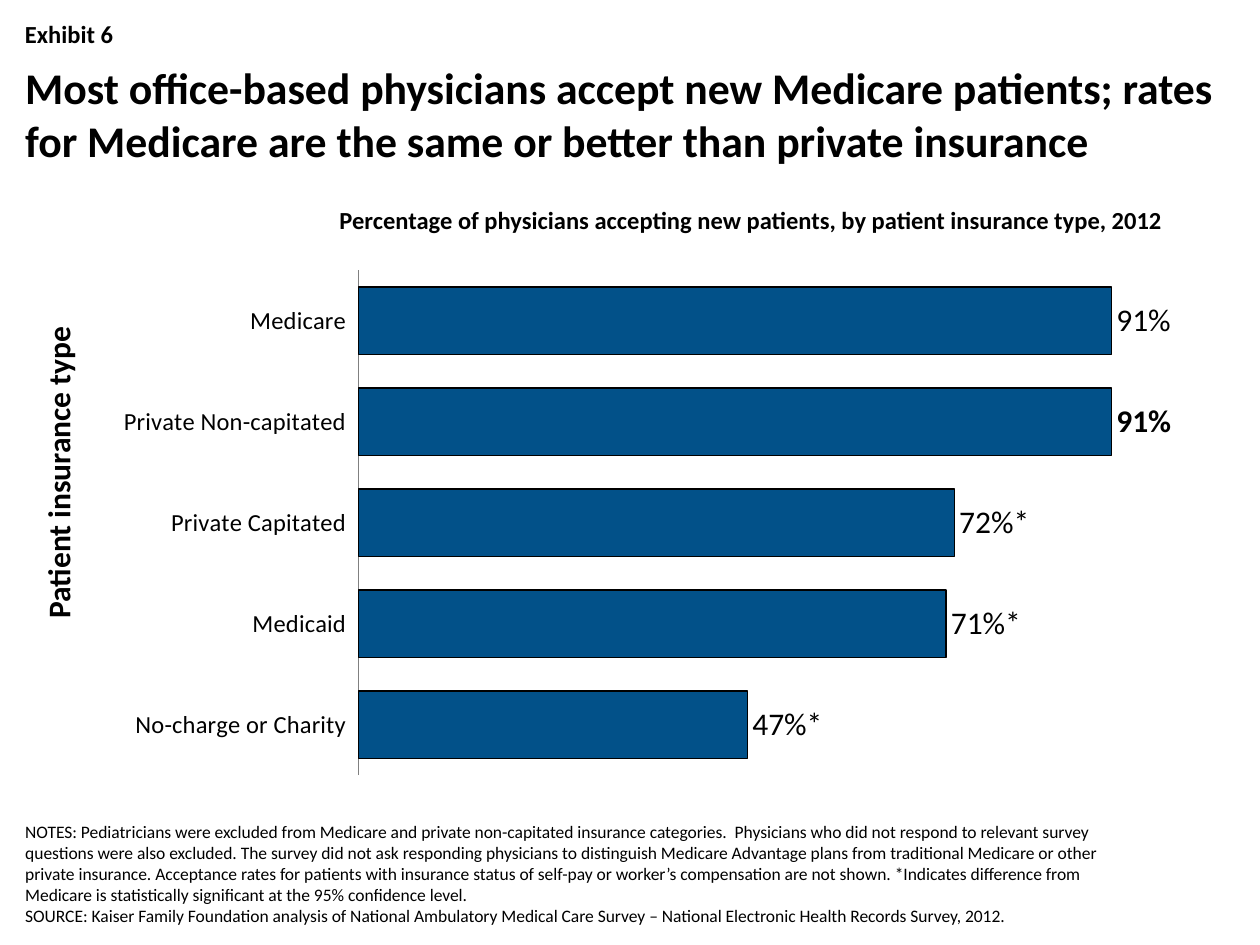
from lxml.etree import SubElement
from pptx import Presentation
from pptx.chart.data import CategoryChartData
from pptx.dml.color import RGBColor
from pptx.enum.chart import XL_CHART_TYPE, XL_LABEL_POSITION, XL_TICK_LABEL_POSITION, XL_TICK_MARK
from pptx.enum.text import MSO_ANCHOR, MSO_AUTO_SIZE, PP_ALIGN
from pptx.oxml import parse_xml
from pptx.oxml.ns import nsdecls, qn
from pptx.util import Inches, Pt

BLACK = RGBColor(0x00, 0x00, 0x00)
BLUE = RGBColor(0x02, 0x51, 0x89)
GRAY = RGBColor(0x80, 0x80, 0x80)
FACE = "Calibri"

TITLE = ("Most office-based physicians accept new Medicare patients; rates "
         "for Medicare are the same or better than private insurance")
NOTES = [
    "NOTES: Pediatricians were excluded from Medicare and private non-capitated "
    "insurance categories.  Physicians who did not respond to relevant survey "
    "questions were also excluded. The survey did not ask responding physicians to "
    "distinguish Medicare Advantage plans from traditional Medicare or other private "
    "insurance. Acceptance rates for patients with insurance status of self-pay or "
    "worker’s compensation are not shown. *Indicates difference from Medicare is "
    "statistically significant at the 95% confidence level.",
    "SOURCE: Kaiser Family Foundation analysis of National Ambulatory Medical Care "
    "Survey – National Electronic Health Records Survey, 2012.",
]
# Category, value, own label (None shows the value itself)
RATES = [
    ("Medicare", 0.91, "91%"),
    ("Private Non-capitated", 0.91, None),
    ("Private Capitated", 0.72, "72%*"),
    ("Medicaid", 0.71, "71%*"),
    ("No-charge or Charity", 0.47, "47%*"),
]


def set_font(font, size, bold=False):
    font.name, font.size, font.bold = FACE, Pt(size), bold
    font.color.rgb = BLACK


def place(shape, box):
    shape.left, shape.top, shape.width, shape.height = map(Inches, box)


def fill_text(shape, lines, size, bold=False, align=PP_ALIGN.LEFT, anchor=MSO_ANCHOR.TOP):
    frame = shape.text_frame
    frame.text = "\n".join(lines)
    frame.word_wrap = True
    frame.auto_size = MSO_AUTO_SIZE.NONE
    frame.vertical_anchor = anchor
    for para in frame.paragraphs:
        para.alignment = align
        para.space_before = Pt(0)
        for run in para.runs:
            set_font(run.font, size, bold)


def add_label(slide, text, box, size, align=PP_ALIGN.LEFT, turn=0):
    label = slide.shapes.add_textbox(*map(Inches, box))
    label.rotation = turn
    fill_text(label, [text], size, True, align)


def add_notes(body):
    place(body, (0.1, 6.8, 9.1, 0.6))
    fill_text(body, NOTES, 10, anchor=MSO_ANCHOR.BOTTOM)
    for para in body.text_frame.paragraphs:
        props = para._p.get_or_add_pPr()
        props.set("marL", "0")
        props.set("indent", "0")
        SubElement(props, qn("a:buNone"))


def set_plot(chart, x, y, wide, high):
    area = chart._chartSpace.chart.plotArea
    for old in area.findall(qn("c:layout")):
        area.remove(old)
    sizes = "".join(f'<c:{tag} val="{val}"/>' for tag, val in
                    (("x", x), ("y", y), ("w", wide), ("h", high)))
    area.insert(0, parse_xml(
        f'<c:layout {nsdecls("c")}><c:manualLayout><c:layoutTarget val="inner"/>'
        f'<c:xMode val="edge"/><c:yMode val="edge"/>{sizes}'
        '</c:manualLayout></c:layout>'))


def style_axes(chart):
    cats = chart.category_axis
    cats.reverse_order = True
    cats.major_tick_mark = cats.minor_tick_mark = XL_TICK_MARK.NONE
    cats.tick_label_position = XL_TICK_LABEL_POSITION.LOW
    set_font(cats.tick_labels.font, 14)
    cats.format.line.color.rgb = GRAY
    cats.format.line.width = Pt(0.75)

    vals = chart.value_axis
    vals.minimum_scale, vals.maximum_scale, vals.major_unit = 0, 1, 0.2
    vals.has_major_gridlines = False
    vals.visible = False


def style_bars(plot):
    plot.gap_width = 50
    plot.vary_by_categories = False
    bars = plot.series[0]
    bars.format.fill.solid()
    bars.format.fill.fore_color.rgb = BLUE
    bars.format.line.color.rgb = BLACK
    bars.format.line.width = Pt(0.75)

    labels = bars.data_labels
    labels.show_value = True
    labels.number_format = "0%"
    labels.number_format_is_linked = False
    labels.position = XL_LABEL_POSITION.OUTSIDE_END
    set_font(labels.font, 18, True)
    for index, (_, _, text) in enumerate(RATES):
        if text:
            label = bars.points[index].data_label
            label.text_frame.text = text
            set_font(label.text_frame.paragraphs[0].runs[0].font, 18)
            label.position = XL_LABEL_POSITION.OUTSIDE_END


def add_rates(slide, box):
    data = CategoryChartData(number_format="0%")
    data.categories = [name for name, _, _ in RATES]
    data.add_series("Series 1", [rate for _, rate, _ in RATES])
    chart = slide.shapes.add_chart(
        XL_CHART_TYPE.BAR_CLUSTERED, *map(Inches, box), data).chart
    chart.has_legend = chart.has_title = False
    set_font(chart.font, 18)
    set_plot(chart, 0.27, 0.114, 0.67, 0.81)
    style_axes(chart)
    style_bars(chart.plots[0])


def main():
    deck = Presentation()
    deck.slide_width, deck.slide_height = Inches(10), Inches(7.5)
    slide = deck.slides.add_slide(deck.slide_layouts[1])

    # Heading
    add_label(slide, "Exhibit 6", (0.1, 0.1, 9.8, 0.34), 14)
    title = slide.shapes.title
    place(title, (0.1, 0.4, 9.8, 1))
    fill_text(title, [TITLE], 25, True, anchor=MSO_ANCHOR.MIDDLE)

    # Chart with its captions
    add_rates(slide, (0.2, 1.58, 9.8, 4.95))
    add_label(slide, "Percentage of physicians accepting new patients, "
              "by patient insurance type, 2012",
              (2.5, 1.58, 6.92, 0.34), 14, PP_ALIGN.CENTER)
    add_label(slide, "Patient insurance type", (-0.83, 3.55, 2.58, 0.4), 18,
              PP_ALIGN.CENTER, 270)

    # Notes and source
    add_notes(slide.placeholders[1])
    deck.save("out.pptx")


if __name__ == "__main__":
    main()
